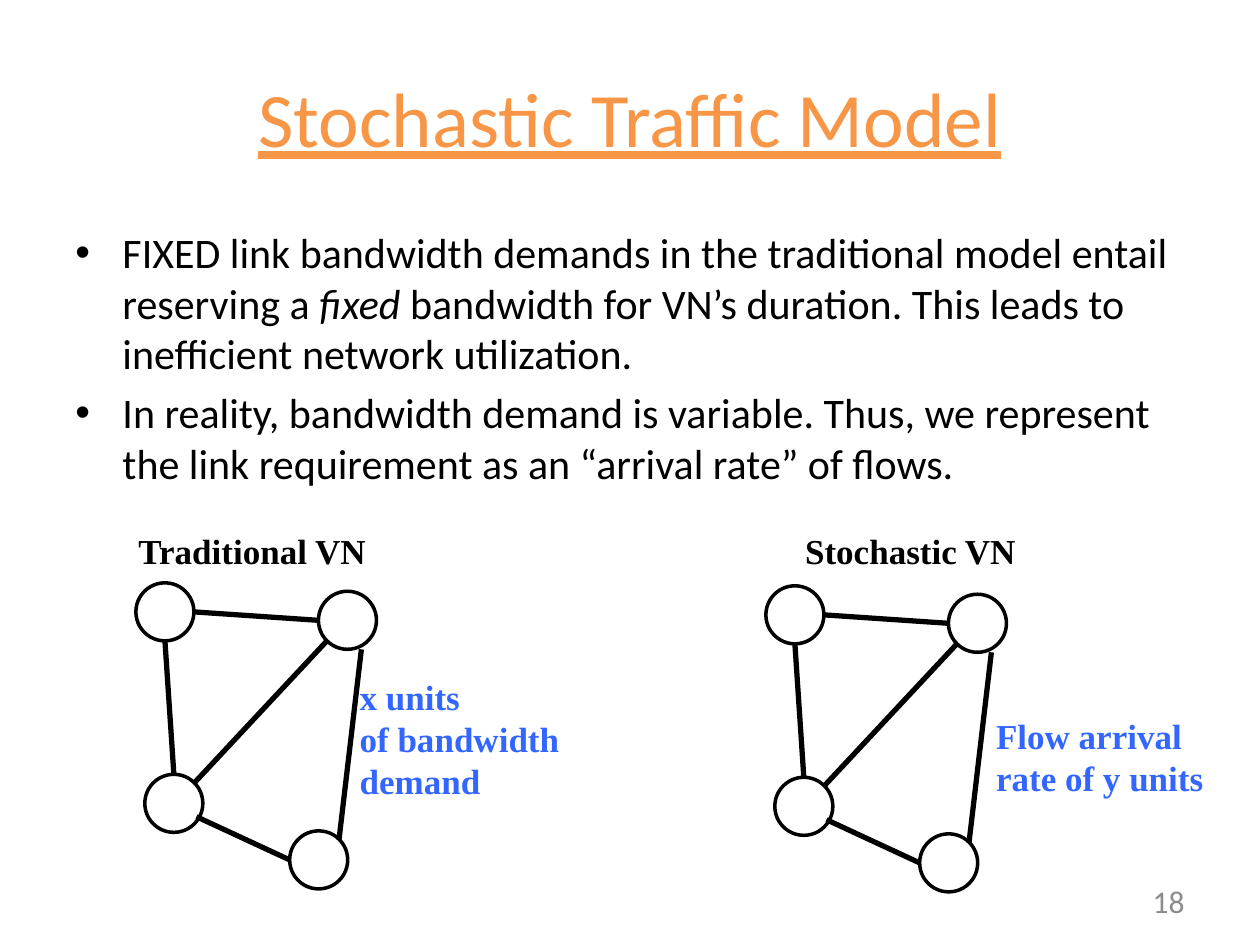
from typing import NamedTuple

from lxml import etree
from pptx import Presentation
from pptx.dml.color import RGBColor
from pptx.enum.shapes import MSO_CONNECTOR, MSO_SHAPE
from pptx.enum.text import MSO_ANCHOR, MSO_AUTO_SIZE, PP_ALIGN
from pptx.oxml.ns import qn
from pptx.util import Cm, Pt

LINE = MSO_CONNECTOR.STRAIGHT
OVAL = MSO_SHAPE.OVAL
TOP, MID = MSO_ANCHOR.TOP, MSO_ANCHOR.MIDDLE
LEFT, CENTER, RIGHT = PP_ALIGN.LEFT, PP_ALIGN.CENTER, PP_ALIGN.RIGHT
GROW = MSO_AUTO_SIZE.SHAPE_TO_FIT_TEXT
SANS, SERIF = "Calibri", "Times New Roman"
COLORS = {"title": "F79646", "ink": "000000", "note": "3366FF", "page": "8C8C8C"}
SIZE = 1.17


class Style(NamedTuple):
    font: str
    size: float
    color: str
    bold: bool = False
    under: bool = False


class Box(NamedTuple):
    x: float
    y: float
    w: float
    h: float


class Run(NamedTuple):
    text: str
    slant: bool = False


class Edge(NamedTuple):
    start: str
    out: tuple[float, float]
    end: str
    into: tuple[float, float]


class Label(NamedTuple):
    box: Box
    color: str
    lines: list[str]


class Net(NamedTuple):
    x: float
    y: float
    labels: list[Label]


NODES = {"a": (0, 0), "b": (3.68, 0.17), "c": (0.18, 3.86), "d": (3.1, 5)}
EDGES = [
    Edge("a", (1, 0.5), "b", (0, 0.5)),
    Edge("c", (0.85, 0.15), "b", (0.15, 0.85)),
    Edge("a", (0.5, 1), "c", (0.5, 0)),
    Edge("c", (0.89, 0.73), "d", (0, 0.5)),
    Edge("d", (0.85, 0.15), "b", (0.74, 1)),
]
NETS = [
    Net(2.74, 11.75, [
        Label(Box(2.54, 10.54, 5.13, 1.11), "ink", ["Traditional VN"]),
        Label(Box(7, 13.49, 4.58, 2.82), "note", ["x units", "of bandwidth", "demand"]),
    ]),
    Net(15.44, 11.81, [
        Label(Box(15.98, 10.54, 4.8, 1.11), "ink", ["Stochastic VN"]),
        Label(Box(19.83, 14.28, 4.73, 1.96), "note", ["Flow arrival", "rate of y units"]),
    ]),
]
POINTS = [
    [
        Run("FIXED link bandwidth demands in the traditional model entail reserving a "),
        Run("fixed", True),
        Run(" bandwidth for VN’s duration. This leads to inefficient network utilization."),
    ],
    [Run("In reality, bandwidth demand is variable. Thus, we represent "
         "the link requirement as an “arrival rate” of flows.")],
]


def shade(name: str) -> RGBColor:
    return RGBColor.from_string(COLORS[name])


def add_text(slide, box: Box, paras: list[list[Run]], style: Style,
             align=LEFT, anchor=TOP, wrap: bool = True):
    frame = slide.shapes.add_textbox(*map(Cm, box)).text_frame
    frame.word_wrap = wrap
    frame.vertical_anchor = anchor
    if not wrap:
        frame.auto_size = GROW
    for i, runs in enumerate(paras):
        para = frame.add_paragraph() if i else frame.paragraphs[0]
        para.alignment = align
        for text, slant in runs:
            run = para.add_run()
            run.text = text
            font = run.font
            font.name, font.size = style.font, Pt(style.size)
            font.bold, font.italic = style.bold, slant
            font.underline = style.under
            font.color.rgb = shade(style.color)
    return frame


def add_dots(frame) -> None:
    for para in frame.paragraphs:
        para.space_before = Pt(5)
        props = para._p.get_or_add_pPr()
        props.set("marL", str(Cm(0.95)))
        props.set("indent", str(-Cm(0.95)))
        etree.SubElement(props, qn("a:buFont")).set("typeface", "Arial")
        etree.SubElement(props, qn("a:buChar")).set("char", "•")


def add_node(slide, x: float, y: float) -> None:
    node = slide.shapes.add_shape(OVAL, Cm(x), Cm(y), Cm(SIZE), Cm(SIZE))
    node.shadow.inherit = False
    node.fill.background()
    node.line.color.rgb = shade("ink")
    node.line.width = Pt(2)


def add_edge(slide, net: Net, edge: Edge) -> None:
    ends = []
    for name, part in ((edge.start, edge.out), (edge.end, edge.into)):
        x, y = NODES[name]
        ends += [Cm(net.x + x + SIZE * part[0]), Cm(net.y + y + SIZE * part[1])]
    link = slide.shapes.add_connector(LINE, *ends)
    link.line.color.rgb = shade("ink")
    link.line.width = Pt(3)
    etree.SubElement(link._element.spPr, qn("a:effectLst"))


def add_net(slide, net: Net) -> None:
    for x, y in NODES.values():
        add_node(slide, net.x + x, net.y + y)
    for edge in EDGES:
        add_edge(slide, net, edge)
    for box, color, lines in net.labels:
        add_text(slide, box, [[Run(line)] for line in lines],
                 Style(SERIF, 20, color, bold=True), wrap=False)


def main() -> None:
    deck = Presentation()
    deck.slide_width, deck.slide_height = Cm(25.4), Cm(19.05)
    slide = deck.slides.add_slide(deck.slide_layouts[6])
    add_text(slide, Box(1.27, 0.76, 22.86, 3.18), [[Run("Stochastic Traffic Model")]],
             Style(SANS, 44, "title", under=True), CENTER, MID)
    body = add_text(slide, Box(1.27, 4.45, 22.86, 12.57), POINTS, Style(SANS, 24, "ink"))
    add_dots(body)
    add_text(slide, Box(18.2, 17.66, 5.93, 1.01), [[Run("18")]],
             Style(SANS, 18, "page"), RIGHT, MID)
    for net in NETS:
        add_net(slide, net)
    deck.save("out.pptx")


if __name__ == "__main__":
    main()
